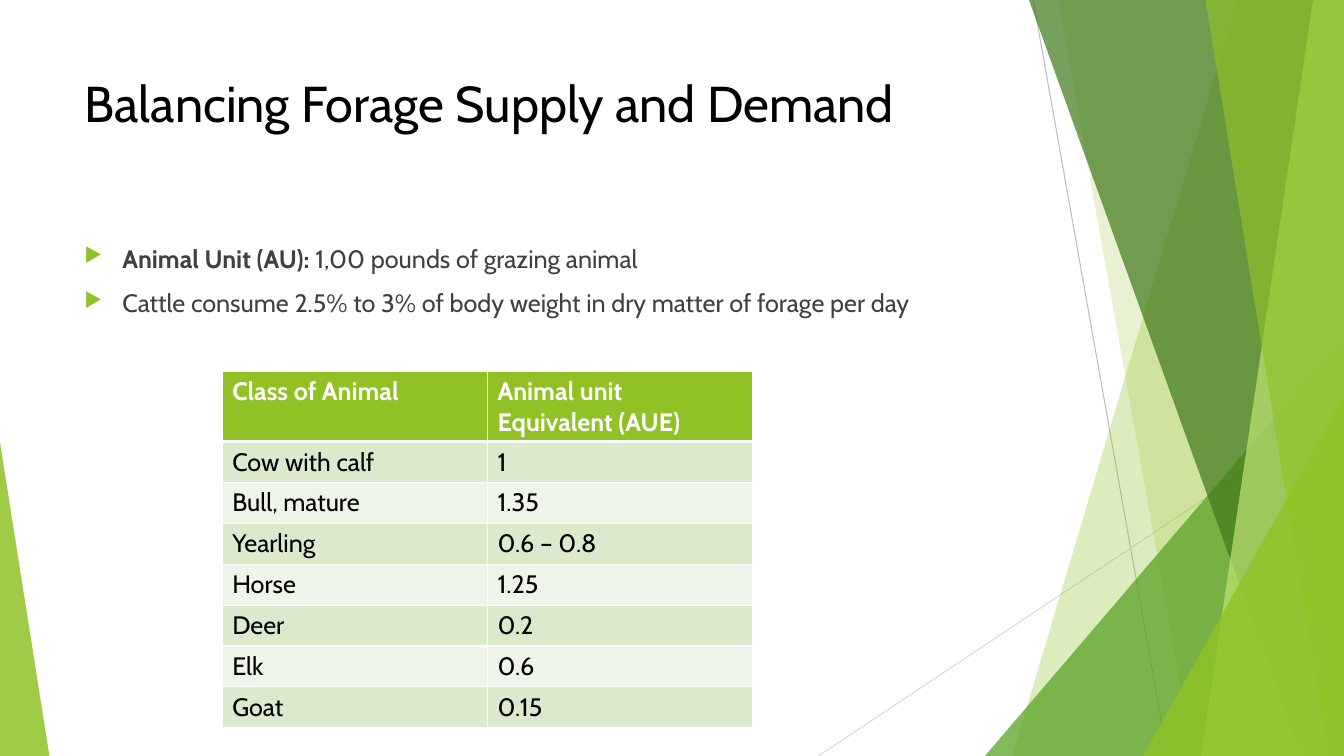
from lxml import etree
from pptx import Presentation
from pptx.dml.color import RGBColor
from pptx.enum.shapes import MSO_CONNECTOR, MSO_SHAPE
from pptx.enum.text import MSO_ANCHOR, MSO_AUTO_SIZE, PP_ALIGN
from pptx.oxml import parse_xml
from pptx.oxml.ns import nsdecls, qn
from pptx.util import Pt

STRAIGHT = MSO_CONNECTOR.STRAIGHT
TRIANGLE = MSO_SHAPE.ISOSCELES_TRIANGLE
TOP = MSO_ANCHOR.TOP
LEFT = PP_ALIGN.LEFT
NO_AUTOFIT = MSO_AUTO_SIZE.NONE

THEME = {
    "font": "Cabin", "title_size": Pt(36), "text_size": Pt(18),
    "black": "000000", "white": "FFFFFF", "body": "404040",
    "lime": "90C226", "green": "54A021", "forest": "3F7819", "pale": "C0E474",
    "band_dark": "DBE9CD", "band_light": "EEF4E8",
    "steep_line": "BFBFBF", "shallow_line": "D9D9D9",
}


def paint(facet, color, opacity):
    facet.shadow.inherit = False
    facet.line.fill.background()
    facet.fill.solid()
    facet.fill.fore_color.rgb = RGBColor.from_string(THEME[color])
    tint = facet.fill._xPr.find(qn("a:solidFill"))[0]
    etree.SubElement(tint, qn("a:alpha")).set("val", str(opacity * 1000))


def set_font(paragraph, size, color, bold=None):
    paragraph.font.name = THEME["font"]
    paragraph.font.size = THEME[size]
    paragraph.font.color.rgb = RGBColor.from_string(THEME[color])
    paragraph.font.bold = bold


deck = Presentation()
deck.slide_width, deck.slide_height = Pt(960), Pt(540)
slide = deck.slides.add_slide(deck.slide_layouts[5])
shapes = slide.shapes

for x1, y1, x2, y2, color in [
    (738, 0, 834, 540, "steep_line"),
    (960, 290, 584.6, 540, "shallow_line"),
]:
    ray = shapes.add_connector(STRAIGHT, Pt(x1), Pt(y1), Pt(x2), Pt(y2))
    ray.line.color.rgb = RGBColor.from_string(THEME[color])
    ray.line.width = Pt(0.75)
    etree.SubElement(ray._element.spPr, qn("a:effectLst"))

facets = [
    ("blade", (884, 723), "lime", 30),
    ("blade", (756, 852), "lime", 20),
    ("triangle", (703.5, 240, 256.5, 300, 1), "green", 72),
    ("blade", (735, 929.5), "forest", 70),
    ("blade", (938, 858), "pale", 70),
    ("blade", (861, 949), "lime", 65),
    ("triangle", (816.5, 283, 143.5, 257, 1), "lime", 80),
    ("triangle", (0, 316, 35.3, 224, 0), "lime", 85),
]
for kind, geometry, color, opacity in facets:
    if kind == "blade":
        top_x, bottom_x = geometry
        outline = shapes.build_freeform(Pt(top_x), 0)
        outline.add_line_segments(
            [(Pt(960), 0), (Pt(960), Pt(540)), (Pt(bottom_x), Pt(540))], close=True
        )
        facet = outline.convert_to_shape()
    else:
        x, y, width, height, apex = geometry
        facet = shapes.add_shape(TRIANGLE, Pt(x), Pt(y), Pt(width), Pt(height))
        facet.adjustments[0] = apex
    paint(facet, color, opacity)

title = shapes.title
title.left, title.top, title.width, title.height = Pt(53.3), Pt(48), Pt(676.7), Pt(104)
title.text_frame.text = "Balancing Forage Supply and Demand"
title.text_frame.vertical_anchor = TOP
title.text_frame.auto_size = NO_AUTOFIT
title.text_frame.paragraphs[0].alignment = LEFT
set_font(title.text_frame.paragraphs[0], "title_size", "black")
title.element.getparent().append(title.element)

facts = shapes.add_textbox(Pt(53.3), Pt(170), Pt(676.7), Pt(305)).text_frame
facts.word_wrap = True
fact_lines = [
    ("Animal Unit (AU): ", "1,00 pounds of grazing animal"),
    ("", "Cattle consume 2.5% to 3% of body weight in dry matter of forage per day"),
]
for index, (term, statement) in enumerate(fact_lines):
    fact = facts.add_paragraph() if index else facts.paragraphs[0]
    fact.space_before = Pt(10)
    set_font(fact, "text_size", "body")
    if term:
        term_run = fact.add_run()
        term_run.text = term
        term_run.font.bold = True
    fact.add_run().text = statement
    properties = fact._p.get_or_add_pPr()
    properties.set("marL", str(Pt(27)))
    properties.set("indent", str(-Pt(27)))
    bullet = [
        f'<a:buClr {nsdecls("a")}><a:srgbClr val="{THEME["lime"]}"/></a:buClr>',
        f'<a:buSzPct {nsdecls("a")} val="80000"/>',
        f'<a:buChar {nsdecls("a")} char="▶"/>',
    ]
    for offset, part in enumerate(bullet, start=1):
        properties.insert(offset, parse_xml(part))

animal_units = [
    ("Class of Animal", "Animal unit Equivalent (AUE)"),
    ("Cow with calf", "1"),
    ("Bull, mature", "1.35"),
    ("Yearling", "0.6 – 0.8"),
    ("Horse", "1.25"),
    ("Deer", "0.2"),
    ("Elk", "0.6"),
    ("Goat", "0.15"),
]
table = shapes.add_table(
    len(animal_units), 2, Pt(158.7), Pt(265), Pt(379), Pt(254.8)
).table
for column in table.columns:
    column.width = Pt(189.5)
for row_index, entries in enumerate(animal_units):
    header = row_index == 0
    table.rows[row_index].height = Pt(50.4 if header else 29.2)
    fill = "lime" if header else "band_dark" if row_index % 2 else "band_light"
    borders = {"lnL": 1, "lnR": 1, "lnT": 3 if row_index == 1 else 1, "lnB": 3 if header else 1}
    for column_index, entry in enumerate(entries):
        cell = table.cell(row_index, column_index)
        cell.text = entry
        set_font(
            cell.text_frame.paragraphs[0], "text_size",
            "white" if header else "black", header,
        )
        cell.fill.solid()
        cell.fill.fore_color.rgb = RGBColor.from_string(THEME[fill])
        for position, (edge, width) in enumerate(borders.items()):
            cell._tc.tcPr.insert(position, parse_xml(
                f'<a:{edge} {nsdecls("a")} w="{Pt(width)}"><a:solidFill>'
                f'<a:srgbClr val="{THEME["white"]}"/></a:solidFill></a:{edge}>'
            ))

deck.save("out.pptx")
